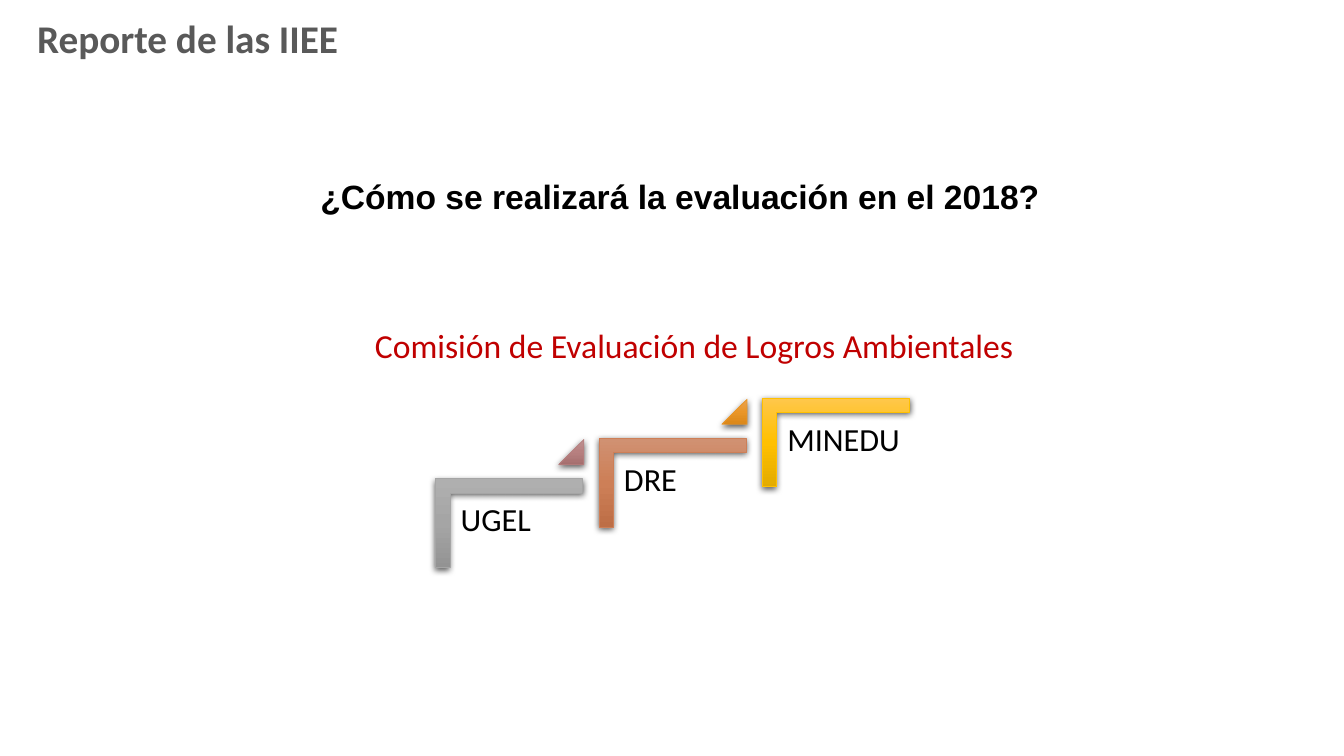
from pptx import Presentation
from pptx.dml.color import RGBColor
from pptx.enum.shapes import MSO_SHAPE as Shape
from pptx.enum.text import MSO_ANCHOR as Anchor
from pptx.oxml import parse_xml
from pptx.oxml.ns import nsdecls
from pptx.util import Inches, Pt

presentation = Presentation()
presentation.slide_width = Inches(13.33)
presentation.slide_height = Inches(7.5)
slide = presentation.slides.add_slide(presentation.slide_layouts[6])


def add_text(text, left, top, width, height, size, color="000000", font="Calibri",
             bold=False, anchor=Anchor.TOP, spacing=1.0, inset=0.05):
    box = slide.shapes.add_textbox(*map(Inches, (left, top, width, height)))
    frame = box.text_frame
    frame.word_wrap = True
    frame.vertical_anchor = anchor
    frame.margin_left = frame.margin_right = Inches(0.1)
    frame.margin_top = frame.margin_bottom = Inches(inset)
    paragraph = frame.paragraphs[0]
    paragraph.text = text
    paragraph.line_spacing = spacing
    paragraph.font.name = font
    paragraph.font.size = Pt(size)
    paragraph.font.bold = bold
    paragraph.font.color.rgb = RGBColor.from_string(color)


def add_glossy(kind, left, top, width, height, adjustments, colors, rotation=0):
    """Add a shape with a top-to-bottom gradient and a soft shadow below it."""
    shape = slide.shapes.add_shape(kind, *map(Inches, (left, top, width, height)))
    shape.rotation = rotation
    for index, value in enumerate(adjustments):
        shape.adjustments[index] = value
    stops = "".join(
        f'<a:gs pos="{index * 50000}"><a:srgbClr val="{color}"/></a:gs>'
        for index, color in enumerate(colors))
    properties = shape.element.spPr
    properties.append(parse_xml(
        f'<a:gradFill {nsdecls("a")} rotWithShape="0"><a:gsLst>{stops}</a:gsLst>'
        '<a:lin ang="5400000" scaled="0"/></a:gradFill>'))
    shape.line.color.rgb = RGBColor.from_string(colors[1])
    shape.line.width = Pt(0.5)
    properties.append(parse_xml(
        f'<a:effectLst {nsdecls("a")}><a:outerShdw blurRad="{Pt(4.5)}" dist="{Pt(1.5)}" '
        'dir="5400000" algn="ctr" rotWithShape="0"><a:srgbClr val="000000">'
        '<a:alpha val="63000"/></a:srgbClr></a:outerShdw></a:effectLst>'))


add_text("Reporte de las IIEE", 0.27, 0.17, 11.5, 0.46, 28, "595959",
         bold=True, anchor=Anchor.MIDDLE, spacing=0.9)
add_text("¿Cómo se realizará la evaluación en el 2018?", 3.08, 1.7, 8.4, 0.5, 24,
         font="Arial", bold=True)
add_text("Comisión de Evaluación de Logros Ambientales", 3.62, 3.17, 7.67, 0.5, 24, "C00000")

# Staircase: each step lies one run to the right and one rise above the last
RUN, RISE = 1.62, 0.4
steps = [
    ("UGEL", ("AFAFAF", "A5A5A5", "939393"), ("BD9191", "B78080", "A56F6F")),
    ("DRE", ("D09172", "CD7F57", "BD6E46"), ("E7A255", "EA9628", "DA8719")),
    ("MINEDU", ("FFC74B", "FFC000", "E3AB00"), None),
]
for number, (name, corner_colors, triangle_colors) in enumerate(steps):
    left, top = 4.47 + number * RUN, 4.9 - number * RISE
    add_glossy(Shape.CORNER, left + 0.14, top - 0.44, 0.88, 1.46, (0.161, 0.161),
               corner_colors, rotation=90)
    add_text(name, left, top, 1.32, 1.16, 23, spacing=0.9, inset=0.1)
    if triangle_colors:
        add_glossy(Shape.ISOSCELES_TRIANGLE, left + 1.07, top - 0.54, 0.25, 0.25, (1,),
                   triangle_colors)

presentation.save("out.pptx")
